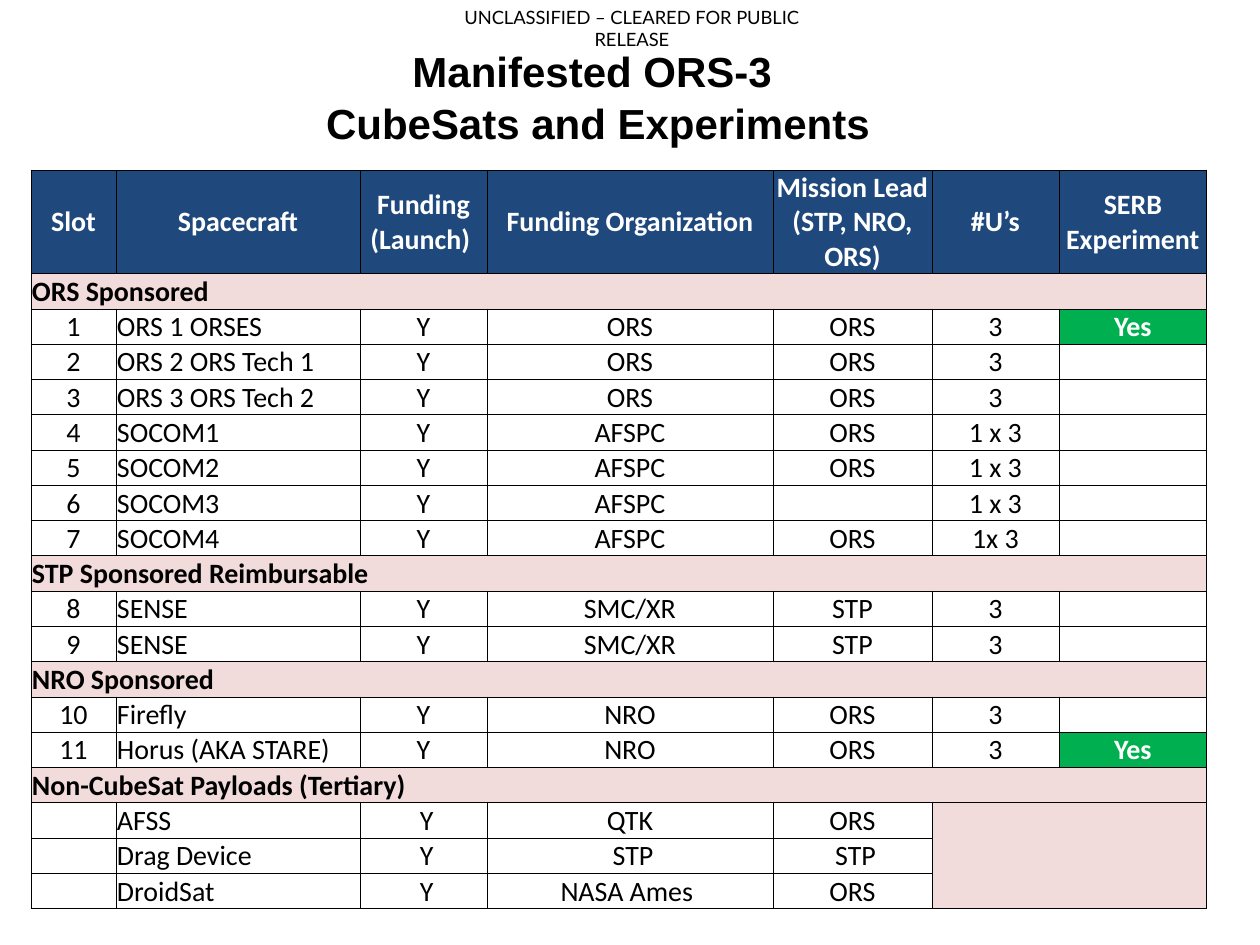
"""Build the slide that lists the ORS-3 CubeSats and experiments."""
from dataclasses import dataclass
from lxml.etree import SubElement as Sub
from pptx import Presentation
from pptx.dml.color import RGBColor as Rgb
from pptx.enum.text import MSO_ANCHOR as Anchor, PP_ALIGN as Align
from pptx.oxml.ns import qn
from pptx.util import Pt


@dataclass(frozen=True)
class Theme:
    ink: str = "000000"
    white: str = "FFFFFF"
    navy: str = "1F497D"
    pink: str = "F2DCDB"
    green: str = "00B050"
    body: str = "Calibri"
    head: str = "Arial"
    mark: str = "Lato"
    cell: float = 16
    title: float = 24
    note: float = 10.5
    rule: float = 0.5


theme = Theme()
PX = 914400 // 126
PAGE = (1260, 945)
NOTE = ["UNCLASSIFIED – CLEARED FOR PUBLIC RELEASE"]
TITLE = ["Manifested ORS-3 ", "CubeSats and Experiments"]
HEADS = ["Slot", "Spacecraft", "Funding (Launch) ", "Funding Organization",
         "Mission Lead (STP, NRO, ORS)", "#U’s", "SERB Experiment"]
GROUPS = [
    ("ORS Sponsored", [
        ("1", "ORS 1 ORSES", "Y", "ORS", "ORS", "3", "Yes"),
        ("2", "ORS 2 ORS Tech 1", "Y", "ORS", "ORS", "3", ""),
        ("3", "ORS 3 ORS Tech 2", "Y", "ORS", "ORS", "3", ""),
        ("4", "SOCOM1", "Y", "AFSPC", "ORS", "1 x 3", ""),
        ("5", "SOCOM2", "Y", "AFSPC", "ORS", "1 x 3", ""),
        ("6", "SOCOM3", "Y", "AFSPC", "", "1 x 3", ""),
        ("7", "SOCOM4", "Y", "AFSPC", "ORS", "1x 3", ""),
    ]),
    ("STP Sponsored Reimbursable", [
        ("8", "SENSE", "Y", "SMC/XR", "STP", "3", ""),
        ("9", "SENSE", "Y", "SMC/XR", "STP", "3", ""),
    ]),
    ("NRO Sponsored", [
        ("10", "Firefly", "Y", "NRO", "ORS", "3", ""),
        ("11", "Horus (AKA STARE)", "Y", "NRO", "ORS", "3", "Yes"),
    ]),
    ("Non-CubeSat Payloads (Tertiary)", [
        ("", "AFSS", " Y", "QTK", "ORS", "", ""),
        ("", "Drag Device", " Y", " STP", " STP", "", ""),
        ("", "DroidSat", " Y", "NASA Ames ", "ORS", "", ""),
    ]),
]
WIDTHS = [85, 244, 127, 286, 159, 127, 148]
LEFT, TOP, HEAD, ROW = 31, 170, 101, 34


def assign(thing, **vals):
    for key, val in vals.items():
        setattr(thing, key, val)


def write(para, text, face, size, color, bold=False):
    if text:
        run = para.add_run()
        run.text = text
        assign(run.font, name=face, size=Pt(size), bold=bold)
        run.font.color.rgb = Rgb.from_string(color)
    else:
        Sub(para._p, qn("a:endParaRPr"), sz=str(int(size * 100)))


def label(slide, box, lines, face, size, bold=False, inset=6, gap=0):
    frame = slide.shapes.add_textbox(*(n * PX for n in box)).text_frame
    assign(frame, word_wrap=True, margin_top=inset * PX)
    for i, text in enumerate(lines):
        para = frame.add_paragraph() if i else frame.paragraphs[0]
        assign(para, alignment=Align.CENTER, space_before=Pt(gap if i else 0))
        write(para, text, face, size, theme.ink, bold)


def dress(cell, text, fill=None, color=theme.ink, bold=False,
          align=Align.CENTER, anchor=Anchor.MIDDLE):
    assign(cell, margin_left=PX, margin_right=PX, margin_top=PX,
           margin_bottom=0, vertical_anchor=anchor)
    props = cell._tc.get_or_add_tcPr()
    for side in "LRTB":
        line = Sub(props, qn(f"a:ln{side}"), w=str(Pt(theme.rule)))
        Sub(Sub(line, qn("a:solidFill")), qn("a:srgbClr"), val=theme.ink)
    if fill:
        cell.fill.solid()
        cell.fill.fore_color.rgb = Rgb.from_string(fill)
    else:
        cell.fill.background()
    para = cell.text_frame.paragraphs[0]
    para.alignment = align
    write(para, text, theme.body, theme.cell, color, bold)


def style(col, text, last):
    if text == "Yes":
        return dict(fill=theme.green, color=theme.white, bold=True)
    return dict(fill=theme.pink if last and col > 4 else None,
                align=Align.LEFT if col == 1 else Align.CENTER,
                anchor=Anchor.BOTTOM if last else Anchor.MIDDLE)


def rows():
    yield [(t, dict(fill=theme.navy, color=theme.white, bold=True))
           for t in HEADS]
    band = dict(fill=theme.pink, bold=True, align=Align.LEFT)
    for name, crafts in GROUPS:
        last = name == GROUPS[-1][0]
        yield [(t, band) for t in [name] + [""] * (len(HEADS) - 1)]
        for craft in crafts:
            yield [(t, style(c, t, last)) for c, t in enumerate(craft)]


def manifest(slide):
    data = list(rows())
    high = HEAD + ROW * (len(data) - 1)
    dims = (LEFT, TOP, sum(WIDTHS), high)
    table = slide.shapes.add_table(len(data), len(WIDTHS),
                                   *(n * PX for n in dims)).table
    assign(table, first_row=False, horz_banding=False)
    for col, wide in zip(table.columns, WIDTHS):
        col.width = wide * PX
    for r, line in enumerate(data):
        table.rows[r].height = (ROW if r else HEAD) * PX
        for c, (text, look) in enumerate(line):
            dress(table.cell(r, c), text, **look)
    at = 1
    end = len(WIDTHS) - 1
    for _, crafts in GROUPS:
        table.cell(at, 0).merge(table.cell(at, end))
        at += len(crafts) + 1
    table.cell(at - len(crafts), 5).merge(table.cell(at - 1, end))


def main():
    deck = Presentation()
    assign(deck, slide_width=PAGE[0] * PX, slide_height=PAGE[1] * PX)
    slide = deck.slides.add_slide(deck.slide_layouts[6])
    manifest(slide)
    label(slide, (136, 35, 924, 78), TITLE, theme.head, theme.title,
          bold=True, inset=10, gap=1)
    label(slide, (416, 0, 432, 35), NOTE, theme.mark, theme.note)
    deck.save("out.pptx")


if __name__ == "__main__":
    main()
